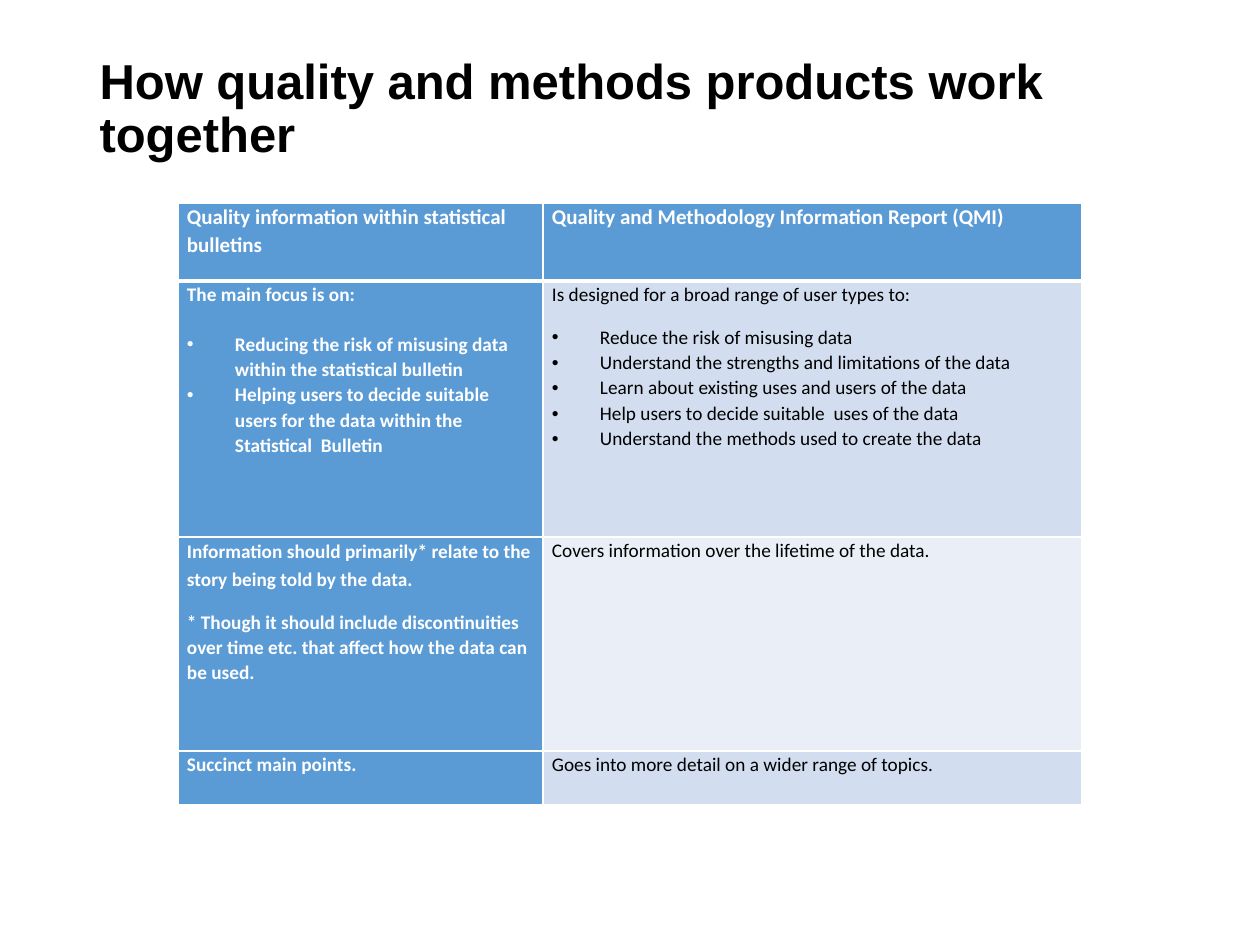
from lxml.etree import SubElement
from pptx import Presentation
from pptx.dml.color import RGBColor
from pptx.enum.text import MSO_ANCHOR, MSO_AUTO_SIZE, PP_ALIGN
from pptx.oxml.ns import qn
from pptx.util import Emu, Pt

PX_PER_INCH = 126
BLUE, BAND, LIGHT = "5B9BD5", "D2DEEF", "EAEFF7"
WHITE, BLACK = "FFFFFF", "000000"


def px(n):
    return Emu(round(n * 914400 / PX_PER_INCH))


def rgb(value):
    return RGBColor.from_string(value)


def set_all(obj, **values):
    for name, value in values.items():
        setattr(obj, name, value)


class Deck:
    title_font = dict(name="Arial", size=Pt(28), bold=True)
    head_font = dict(name="Calibri", size=Pt(12), bold=True)
    side_font = dict(name="Calibri", size=Pt(11), bold=True)
    body_font = dict(name="Calibri", size=Pt(11), bold=False)
    spacing = dict(line_spacing=1.07, space_before=Pt(0), space_after=Pt(0))
    insets = dict(margin_left=px(9), margin_right=px(9), margin_top=0, margin_bottom=0)

    def __init__(self, width, height):
        self.prs = Presentation()
        set_all(self.prs, slide_width=px(width), slide_height=px(height))
        self.s = self.prs.slides.add_slide(self.prs.slide_layouts[5])

    def run(self, p, text, font, color):
        r = p.add_run()
        r.text = text
        set_all(r.font, **font)
        r.font.color.rgb = rgb(color)

    def title(self, text, left, top, width, height):
        sp = self.s.shapes.title
        set_all(sp, left=px(left), top=px(top), width=px(width), height=px(height))
        tf = sp.text_frame
        set_all(tf, word_wrap=True, auto_size=MSO_AUTO_SIZE.NONE,
                vertical_anchor=MSO_ANCHOR.MIDDLE)
        p = tf.paragraphs[0]
        set_all(p, alignment=PP_ALIGN.LEFT, line_spacing=0.9, space_before=Pt(0))
        self.run(p, text, self.title_font, BLACK)

    def bullet(self, p, indent=48):
        pPr = p._p.get_or_add_pPr()
        pPr.set("marL", str(px(indent)))
        pPr.set("indent", str(-px(indent)))
        SubElement(pPr, qn("a:buFont")).set("typeface", "Arial")
        SubElement(pPr, qn("a:buChar")).set("char", "•")

    def borders(self, cell, top, bottom):
        """Draw white cell borders; top and bottom are widths in points."""
        tcPr = cell._tc.get_or_add_tcPr()
        for side, width in zip("LRTB", (1, 1, top, bottom)):
            ln = SubElement(tcPr, qn("a:ln" + side), w=str(Pt(width)))
            fill = SubElement(ln, qn("a:solidFill"))
            SubElement(fill, qn("a:srgbClr"), val=WHITE)

    def cell(self, cell, paragraphs, font, color, fill):
        """Fill a cell; each paragraph is (text, is_bullet, format overrides)."""
        set_all(cell, **self.insets)
        cell.fill.solid()
        cell.fill.fore_color.rgb = rgb(fill)
        tf = cell.text_frame
        for i, (text, is_bullet, extra) in enumerate(paragraphs):
            p = tf.paragraphs[0] if i == 0 else tf.add_paragraph()
            if is_bullet:
                self.bullet(p)
            set_all(p, **{**self.spacing, **extra})
            self.run(p, text, font, color)

    def table(self, rows, left, top, widths, heights):
        frame = self.s.shapes.add_table(len(rows), len(widths), px(left), px(top),
                                        px(sum(widths)), px(sum(heights)))
        tbl = frame.table
        set_all(tbl, first_row=False, horz_banding=False)
        for col, width in zip(tbl.columns, widths):
            col.width = px(width)
        for i, (row, height) in enumerate(zip(rows, heights)):
            tbl.rows[i].height = px(height)
            for j, paragraphs in enumerate(row):
                cell = tbl.cell(i, j)
                self.borders(cell, top=3 if i == 1 else 1, bottom=3 if i == 0 else 1)
                if i == 0:
                    style = self.head_font, WHITE, BLUE
                elif j == 0:
                    style = self.side_font, WHITE, BLUE
                else:
                    style = self.body_font, BLACK, BAND if i % 2 else LIGHT
                self.cell(cell, paragraphs, *style)


def para(text, **extra):
    return text, False, extra


def bullets(*texts):
    return [(text, True, {}) for text in texts]


ROWS = [
    [[para("Quality information within statistical bulletins")],
     [para("Quality and Methodology Information Report (QMI)")]],
    [[para("The main focus is on:", space_after=Pt(14)),
      *bullets("Reducing the risk of misusing data within the statistical bulletin",
               "Helping users to decide suitable users for the data within the "
               "Statistical  Bulletin")],
     [para("Is designed for a broad range of user types to:", space_after=Pt(10)),
      *bullets("Reduce the risk of misusing data",
               "Understand the strengths and limitations of the data",
               "Learn about existing uses and users of the data",
               "Help users to decide suitable  uses of the data",
               "Understand the methods used to create the data")]],
    [[para("Information should primarily* relate to the story being told by the data.",
           line_spacing=1.15, space_after=Pt(10)),
      para("* Though it should include discontinuities over time etc. that affect "
           "how the data can be used.")],
     [para("Covers information over the lifetime of the data.")]],
    [[para("Succinct main points.")],
     [para("Goes into more detail on a wider range of topics.")]],
]


def main():
    deck = Deck(1260, 945)
    deck.title("How quality and methods products work together", 87, 50, 1086, 120)
    deck.table(ROWS, 178, 203, widths=(365, 539), heights=(78, 256, 214, 54))
    deck.prs.save("out.pptx")


if __name__ == "__main__":
    main()
